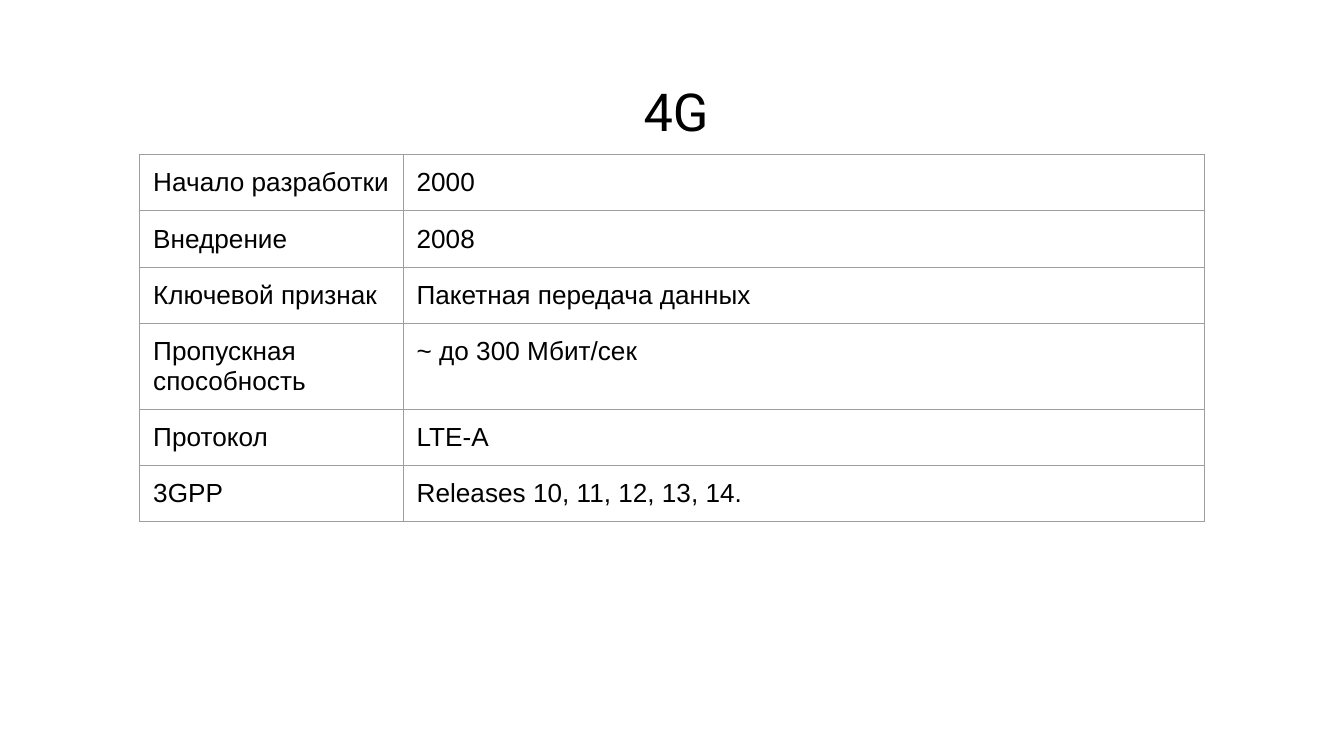
import pptx
import pptx.util
import pptx.dml.color
import pptx.enum.text
import pptx.oxml
import pptx.oxml.ns

Inches, Pt = pptx.util.Inches, pptx.util.Pt

ROWS = [
    ("Начало разработки", "2000"),
    ("Внедрение", "2008"),
    ("Ключевой признак", "Пакетная передача данных"),
    ("Пропускная способность", "~ до 300 Мбит/сек"),
    ("Протокол", "LTE-A"),
    ("3GPP", "Releases 10, 11, 12, 13, 14."),
]
SLIDE_WIDTH = 10
COLUMN_WIDTHS = (1.96, 5.96)
ROW_HEIGHT = 5 / 12
PADDING = 0.1


def rgb(color):
    return pptx.dml.color.RGBColor.from_string(color)


def set_padding(target):
    target.margin_left = target.margin_right = Inches(PADDING)
    target.margin_top = target.margin_bottom = Inches(PADDING)


def set_font(p, name, size, color="000000"):
    p.font.name = name
    p.font.size = Pt(size)
    p.font.color.rgb = rgb(color)


def set_borders(cell, color, width):
    # Border lines must come before the fill in the cell properties
    tc_pr = cell._tc.get_or_add_tcPr()
    for i, side in enumerate(("lnL", "lnR", "lnT", "lnB")):
        tc_pr.insert(i, pptx.oxml.parse_xml(
            f'<a:{side} {pptx.oxml.ns.nsdecls("a")} w="{Pt(width)}">'
            f'<a:solidFill><a:srgbClr val="{color}"/></a:solidFill>'
            f'</a:{side}>'))


def add_title(s, text, left, top, width, height):
    title = s.shapes.title
    title.left, title.top = Inches(left), Inches(top)
    title.width, title.height = Inches(width), Inches(height)
    tf = title.text_frame
    tf.text = text
    tf.word_wrap = True
    tf.auto_size = pptx.enum.text.MSO_AUTO_SIZE.NONE
    tf.vertical_anchor = pptx.enum.text.MSO_ANCHOR.TOP
    set_padding(tf)
    p = tf.paragraphs[0]
    p.alignment = pptx.enum.text.PP_ALIGN.CENTER
    set_font(p, "Roboto", 28)


def add_facts_table(s, left, top):
    table = s.shapes.add_table(
        len(ROWS), len(COLUMN_WIDTHS), Inches(left), Inches(top),
        Inches(sum(COLUMN_WIDTHS)), Inches(ROW_HEIGHT * len(ROWS))).table
    table.first_row = table.horz_banding = False
    for column, width in zip(table.columns, COLUMN_WIDTHS):
        column.width = Inches(width)
    for r, values in enumerate(ROWS):
        table.rows[r].height = Inches(ROW_HEIGHT)
        for c, value in enumerate(values):
            cell = table.cell(r, c)
            cell.text = value
            cell.fill.background()
            set_padding(cell)
            set_font(cell.text_frame.paragraphs[0], "Arial", 14)
            set_borders(cell, "9E9E9E", 0.75)


def main():
    prs = pptx.Presentation()
    # 16:9 slide
    prs.slide_width = Inches(SLIDE_WIDTH)
    prs.slide_height = Inches(SLIDE_WIDTH * 9 / 16)
    s = prs.slides.add_slide(prs.slide_layouts[5])  # title only
    s.background.fill.solid()
    s.background.fill.fore_color.rgb = rgb("FFFFFF")
    add_title(s, "4G", 0.4, 0.49, 9.26, 0.63)
    add_facts_table(s, 1.04, 1.15)
    prs.save("out.pptx")


if __name__ == "__main__":
    main()
